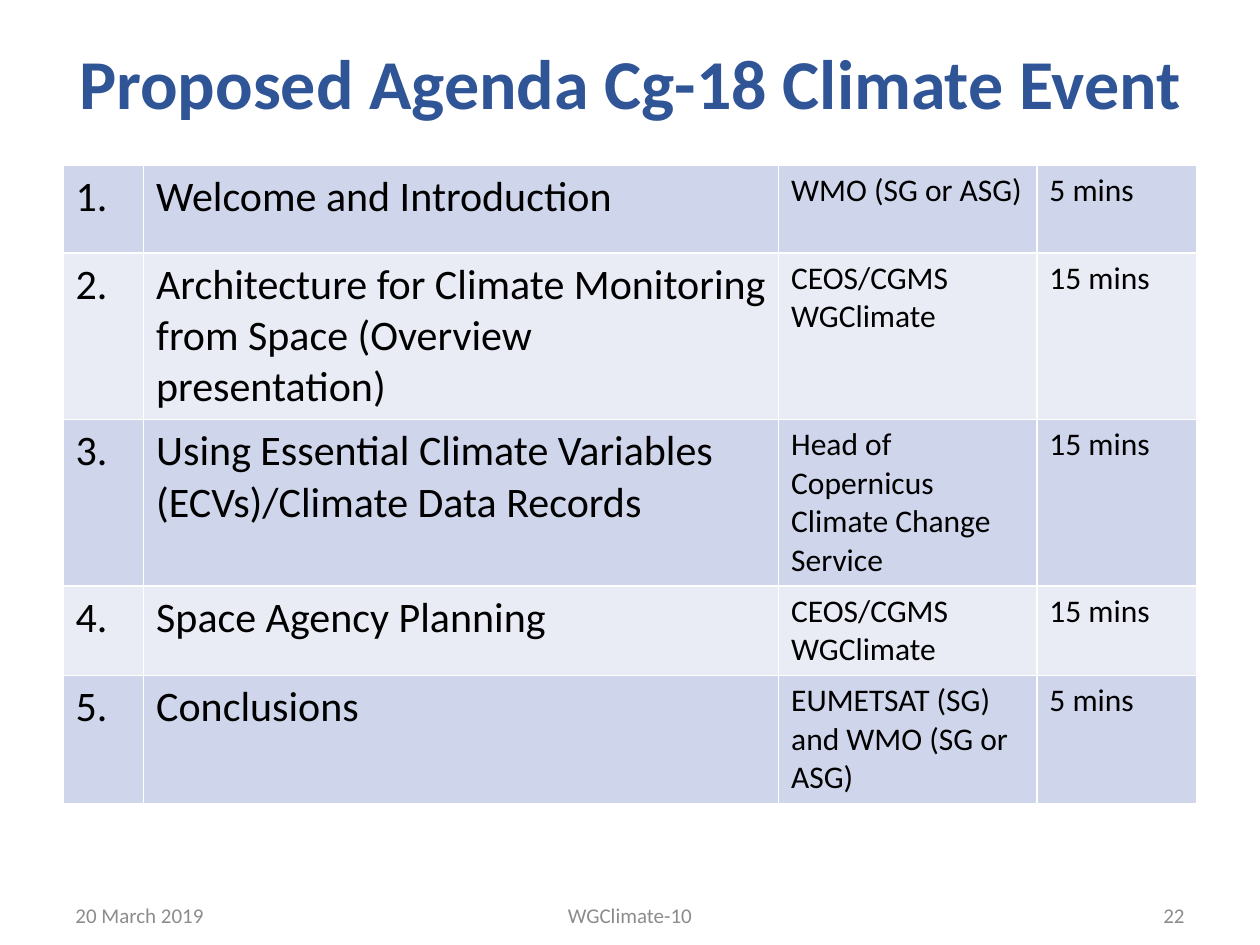
from lxml import etree
from pptx import Presentation
from pptx.dml.color import RGBColor
from pptx.enum.text import MSO_ANCHOR, PP_ALIGN
from pptx.oxml.ns import qn
from pptx.util import Inches, Pt

LEFT, CENTER, RIGHT = PP_ALIGN.LEFT, PP_ALIGN.CENTER, PP_ALIGN.RIGHT
MIDDLE = MSO_ANCHOR.MIDDLE
FONT = "Calibri"
BANDS = ("CFD5EA", "E9EBF5")
COLUMNS = (0.64, 5.04, 2.05, 1.27)
SIZES = (24, 24, 18, 18)
ROW_HEIGHTS = (0.7, 1.32, 1.32, 0.71, 1.02)
AGENDA = (
    ("Welcome and Introduction", "WMO (SG or ASG)", 5),
    ("Architecture for Climate Monitoring from Space (Overview presentation)",
     "CEOS/CGMS WGClimate", 15),
    ("Using Essential Climate Variables (ECVs)/Climate Data Records",
     "Head of Copernicus Climate Change Service", 15),
    ("Space Agency Planning", "CEOS/CGMS WGClimate", 15),
    ("Conclusions", "EUMETSAT (SG) and WMO (SG or ASG)", 5),
)
FOOTER = (
    ("20 March 2019", 0.5, 2.25, LEFT),
    ("WGClimate-10", 2.56, 4.88, CENTER),
    ("22", 7.25, 2.25, RIGHT),
)


def rgb(color):
    return RGBColor.from_string(color)


def write(tf, text, size, color, align=LEFT, bold=False):
    p = tf.paragraphs[0]
    p.alignment = align
    r = p.add_run()
    r.text = text
    style = {"name": FONT, "size": Pt(size), "bold": bold}
    for name, value in style.items():
        setattr(r.font, name, value)
    r.font.color.rgb = rgb(color)


def set_borders(cell, color, width):
    tc_pr = cell._tc.get_or_add_tcPr()
    for side in ("lnL", "lnR", "lnT", "lnB"):
        ln = etree.SubElement(tc_pr, qn(f"a:{side}"), w=str(Pt(width)))
        fill = etree.SubElement(ln, qn("a:solidFill"))
        etree.SubElement(fill, qn("a:srgbClr"), val=color)


def add_title(s, left, top, width, height):
    sp = s.shapes.title
    box = {"left": left, "top": top, "width": width, "height": height}
    for name, value in box.items():
        setattr(sp, name, Inches(value))
    tf = sp.text_frame
    tf.word_wrap = True
    tf.vertical_anchor = MIDDLE
    write(tf, "Proposed Agenda Cg-18 Climate Event", 40, "2F5597", CENTER, True)


def add_agenda(s, left, top, width, height):
    table = s.shapes.add_table(
        len(AGENDA), len(COLUMNS),
        Inches(left), Inches(top), Inches(width), Inches(height)).table
    table.first_row = False
    for column, size in zip(table.columns, COLUMNS):
        column.width = Inches(size)
    for i, (topic, speaker, minutes) in enumerate(AGENDA):
        table.rows[i].height = Inches(ROW_HEIGHTS[i])
        texts = (f"{i + 1}.", topic, speaker, f"{minutes} mins")
        for cell, text, size in zip(table.rows[i].cells, texts, SIZES):
            set_borders(cell, "FFFFFF", 1)
            cell.fill.solid()
            cell.fill.fore_color.rgb = rgb(BANDS[i % 2])
            write(cell.text_frame, text, size, "000000")


def add_footer(s, top, height):
    for text, left, width, align in FOOTER:
        sp = s.shapes.add_textbox(
            Inches(left), Inches(top), Inches(width), Inches(height))
        tf = sp.text_frame
        tf.word_wrap = True
        tf.vertical_anchor = MIDDLE
        write(tf, text, 12, "8C8C8C", align)


def main():
    prs = Presentation()
    prs.slide_width, prs.slide_height = Inches(10), Inches(7.5)
    s = prs.slides.add_slide(prs.slide_layouts[5])
    add_title(s, 0.5, 0.21, 9, 0.88)
    add_agenda(s, 0.5, 1.31, 9, sum(ROW_HEIGHTS))
    add_footer(s, 7.14, 0.24)
    prs.save("out.pptx")


if __name__ == "__main__":
    main()
